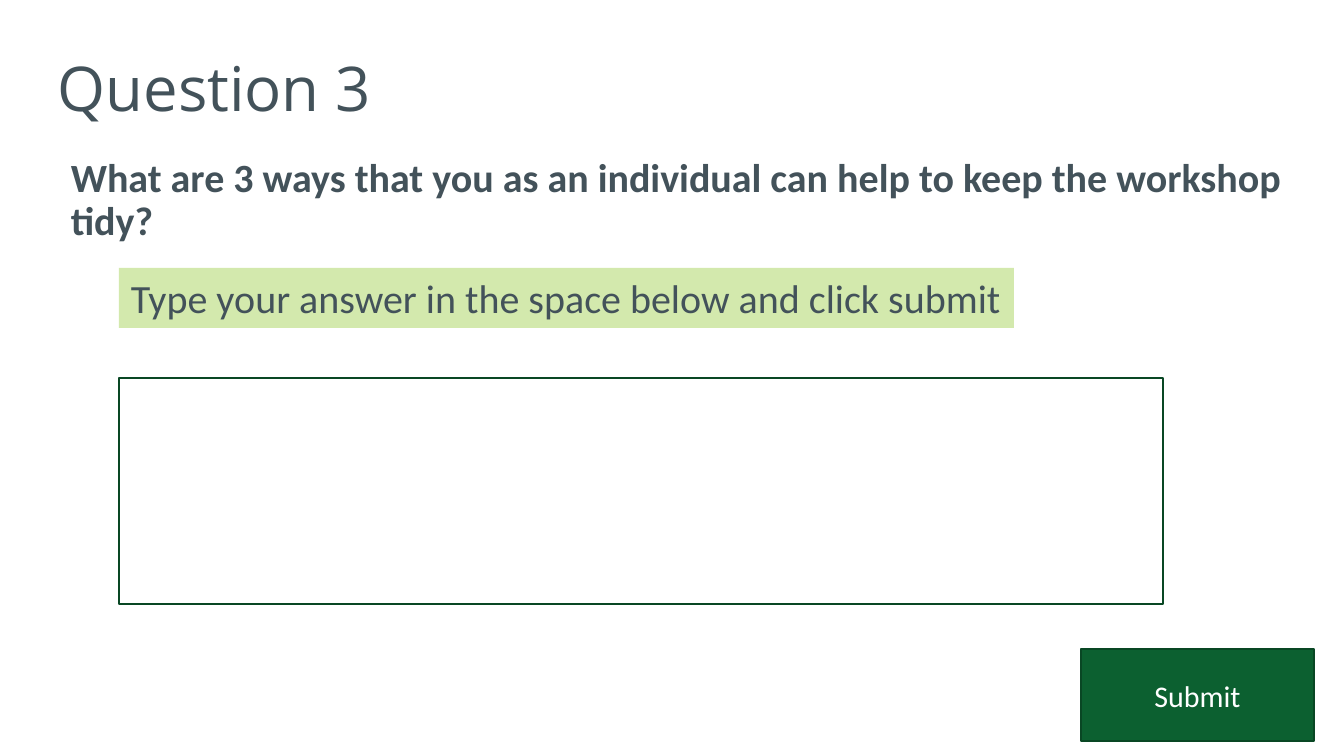
"""Builds a quiz slide with a question, an answer box and a submit button."""
from dataclasses import dataclass
from typing import Optional

from pptx import Presentation
from pptx import util as u
from pptx.dml.color import RGBColor
from pptx.enum import shapes, text

EMU_PER_PX = 914400 // 120


@dataclass(frozen=True)
class Theme:
    slate: str = "43525A"
    white: str = "FFFFFF"
    pale_green: str = "D3E9AD"
    green: str = "0C6030"
    dark_green: str = "094724"
    heading_font: str = "Open Sans"
    body_font: str = "Calibri"
    title_size: int = 37
    body_size: int = 24
    button_size: int = 18
    line_width: int = 1


THEME = Theme()


@dataclass(frozen=True)
class Box:
    left: int
    top: int
    width: int
    height: int
    fill: Optional[str] = None
    line: Optional[str] = None


TITLE = Box(46, 19, 1268, 146)
QUESTION = Box(59, 152, 1238, 586)
INSTRUCTION = Box(119, 268, 895, 60, fill=THEME.pale_green)
ANSWER = Box(119, 378, 1044, 226, line=THEME.dark_green)
SUBMIT = Box(1081, 649, 233, 92, fill=THEME.green, line=THEME.dark_green)


def px(length: int) -> u.Emu:
    return u.Emu(length * EMU_PER_PX)


def frame(box: Box) -> tuple:
    return px(box.left), px(box.top), px(box.width), px(box.height)


def add_text_box(slide, box: Box):
    return slide.shapes.add_textbox(*frame(box))


def add_rectangle(slide, box: Box):
    shape = slide.shapes.add_shape(shapes.MSO_SHAPE.RECTANGLE, *frame(box))
    shape.shadow.inherit = False
    if box.fill:
        shape.fill.solid()
        shape.fill.fore_color.rgb = RGBColor.from_string(box.fill)
    else:
        shape.fill.background()
    if box.line:
        shape.line.color.rgb = RGBColor.from_string(box.line)
        shape.line.width = u.Pt(THEME.line_width)
    else:
        shape.line.fill.background()
    return shape


def write(shape, content: str, *, size: int = THEME.body_size,
          font: str = THEME.body_font, color: str = THEME.slate,
          bold: bool = False, align=text.PP_ALIGN.LEFT,
          anchor=text.MSO_ANCHOR.TOP, line_spacing: float = 1.0,
          space_before: float = 0) -> None:
    text_frame = shape.text_frame
    text_frame.word_wrap = True
    text_frame.vertical_anchor = anchor
    paragraph = text_frame.paragraphs[0]
    paragraph.alignment = align
    paragraph.line_spacing = line_spacing
    paragraph.space_before = u.Pt(space_before)
    run = paragraph.add_run()
    run.text = content
    run.font.name = font
    run.font.size = u.Pt(size)
    run.font.bold = bold
    run.font.color.rgb = RGBColor.from_string(color)


def main() -> None:
    presentation = Presentation()
    presentation.slide_width = px(1344)
    presentation.slide_height = px(756)
    slide = presentation.slides.add_slide(presentation.slide_layouts[6])

    write(add_text_box(slide, TITLE), "Question 3",
          size=THEME.title_size, font=THEME.heading_font,
          anchor=text.MSO_ANCHOR.MIDDLE, line_spacing=0.9)
    write(add_text_box(slide, QUESTION),
          "What are 3 ways that you as an individual can help to keep "
          "the workshop tidy?",
          bold=True, line_spacing=0.9, space_before=8.4)
    write(add_rectangle(slide, INSTRUCTION),
          "Type your answer in the space below and click submit")
    add_rectangle(slide, ANSWER)
    write(add_rectangle(slide, SUBMIT), "Submit",
          size=THEME.button_size, color=THEME.white,
          align=text.PP_ALIGN.CENTER, anchor=text.MSO_ANCHOR.MIDDLE)

    presentation.save("out.pptx")


if __name__ == "__main__":
    main()
